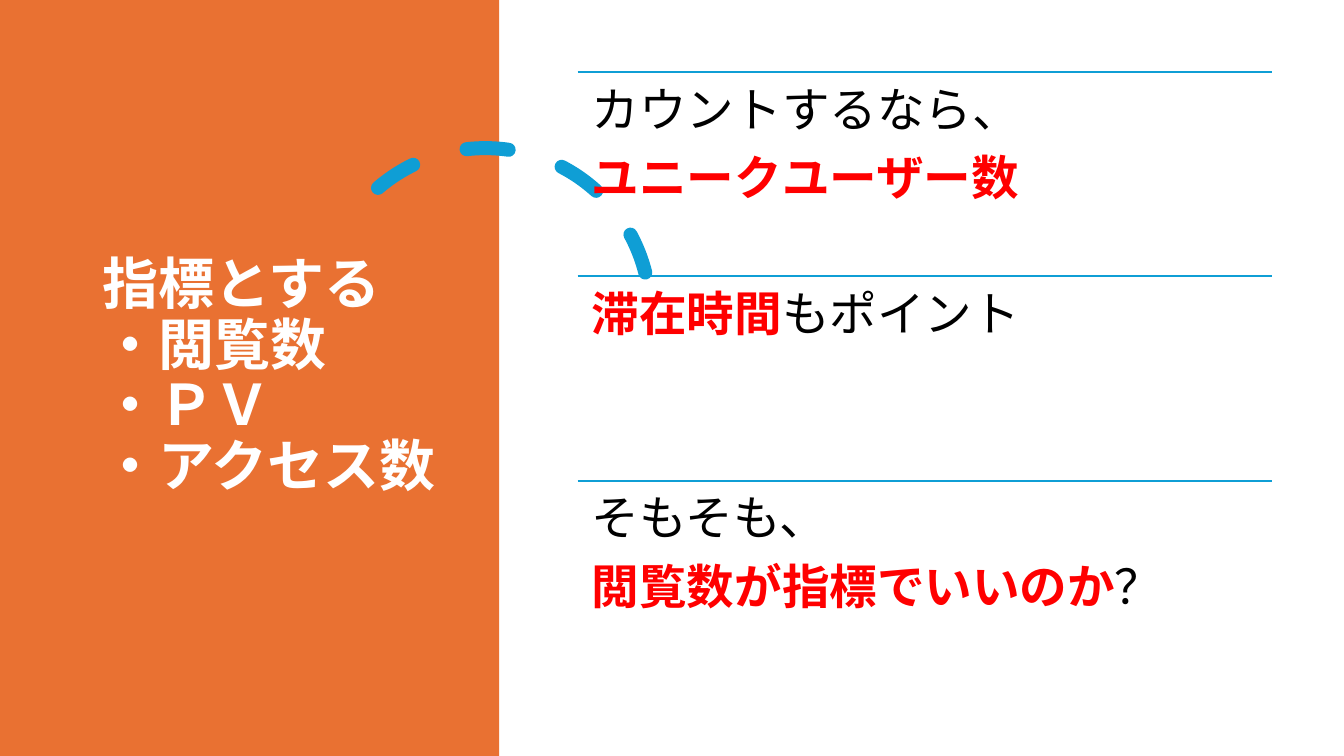
from lxml import etree
from pptx import Presentation, util as u
from pptx.dml.color import RGBColor
from pptx.enum import dml, shapes, text
from pptx.oxml.ns import qn

W, H = 13.33, 7.5
ORANGE, BLUE, RED, BLACK, WHITE = "E97132", "0F9ED5", "FF0000", "000000", "FFFFFF"


def color(hex_value):
    return RGBColor.from_string(hex_value)


class Board:
    """Style and current slide; positions and sizes are shares of the slide."""

    font = "Noto Sans CJK JP"
    line_spacing = 0.9

    def __init__(self, prs):
        self.width, self.height = prs.slide_width, prs.slide_height
        self.slide = prs.slides.add_slide(prs.slide_layouts[6])

    def box(self, x, y, w, h):
        return [round(share * side) for share, side in
                zip((x, y, w, h), (self.width, self.height) * 2)]

    def panel(self, x, y, w, h, fill):
        sp = self.slide.shapes.add_shape(shapes.MSO_SHAPE.RECTANGLE, *self.box(x, y, w, h))
        sp.shadow.inherit = False
        sp.fill.solid()
        sp.fill.fore_color.rgb = color(fill)
        sp.line.fill.background()

    def dashed_arc(self, x, y, w, h, start, rotation, stroke, weight):
        sp = self.slide.shapes.add_shape(shapes.MSO_SHAPE.ARC, *self.box(x, y, w, h))
        sp.shadow.inherit = False
        sp.adjustments[0], sp.adjustments[1] = start, 0
        sp.rotation = rotation
        sp.fill.background()
        sp.line.color.rgb = color(stroke)
        sp.line.width = u.Pt(weight)
        sp.line.dash_style = dml.MSO_LINE.DASH
        sp.line._get_or_add_ln().set("cap", "rnd")

    def rule(self, x, y, w, stroke, weight):
        left, top, width, _ = self.box(x, y, w, 0)
        line = self.slide.shapes.add_connector(
            shapes.MSO_CONNECTOR.STRAIGHT, left, top, left + width, top)
        line.line.color.rgb = color(stroke)
        line.line.width = u.Pt(weight)
        etree.SubElement(line._element.spPr, qn("a:effectLst"))

    def text(self, x, y, w, h, paragraphs, size, inset=(0.1, 0.05), after=0,
             anchor=text.MSO_ANCHOR.TOP):
        """Each paragraph is a list of (wording, colour, bold) runs."""
        tf = self.slide.shapes.add_textbox(*self.box(x, y, w, h)).text_frame
        tf.word_wrap = True
        tf.vertical_anchor = anchor
        tf.margin_left = tf.margin_right = u.Inches(inset[0])
        tf.margin_top = tf.margin_bottom = u.Inches(inset[1])
        for i, runs in enumerate(paragraphs):
            p = tf.add_paragraph() if i else tf.paragraphs[0]
            p.line_spacing = self.line_spacing
            p.space_after = u.Pt(after)
            for wording, hue, bold in runs:
                r = p.add_run()
                r.text = wording
                r.font.size = u.Pt(size)
                r.font.bold = bold
                r.font.color.rgb = color(hue)
                r.font.name = self.font
                etree.SubElement(r._r.get_or_add_rPr(), qn("a:ea"), typeface=self.font)


def main():
    prs = Presentation()
    prs.slide_width, prs.slide_height = u.Inches(W), u.Inches(H)
    board = Board(prs)

    # Left panel, arc and title
    board.panel(0, 0, 4.95 / W, 1, ORANGE)
    board.dashed_arc(3.18 / W, 1.47 / H, 3.27 / W, 3.27 / H, 146.13, 345.8, BLUE, 10)
    title = ["指標とする", "・閲覧数", "・ＰＶ", "・アクセス数"]
    board.text(0.92 / W, 0.7 / H, 3.59 / W, 6.09 / H,
               [[(line, WHITE, True)] for line in title], 40,
               anchor=text.MSO_ANCHOR.MIDDLE)

    # Three equal rows, each under a rule
    points = [
        [[("カウントするなら、", BLACK, False)], [("ユニークユーザー数", RED, True)]],
        [[("滞在時間", RED, True), ("もポイント", BLACK, False)]],
        [[("そもそも、", BLACK, False)],
         [("閲覧数が指標でいいのか", RED, True), ("？", BLACK, False)]],
    ]
    left, top, width, row = 5.73 / W, 0.715 / H, 6.89 / W, 2.027 / H
    for i, paragraphs in enumerate(points):
        y = top + i * row
        board.rule(left, y, width, BLUE, 1.5)
        board.text(left, y, width, row, paragraphs, 34, inset=(0.14, 0.14), after=12)

    prs.save("out.pptx")


if __name__ == "__main__":
    main()
